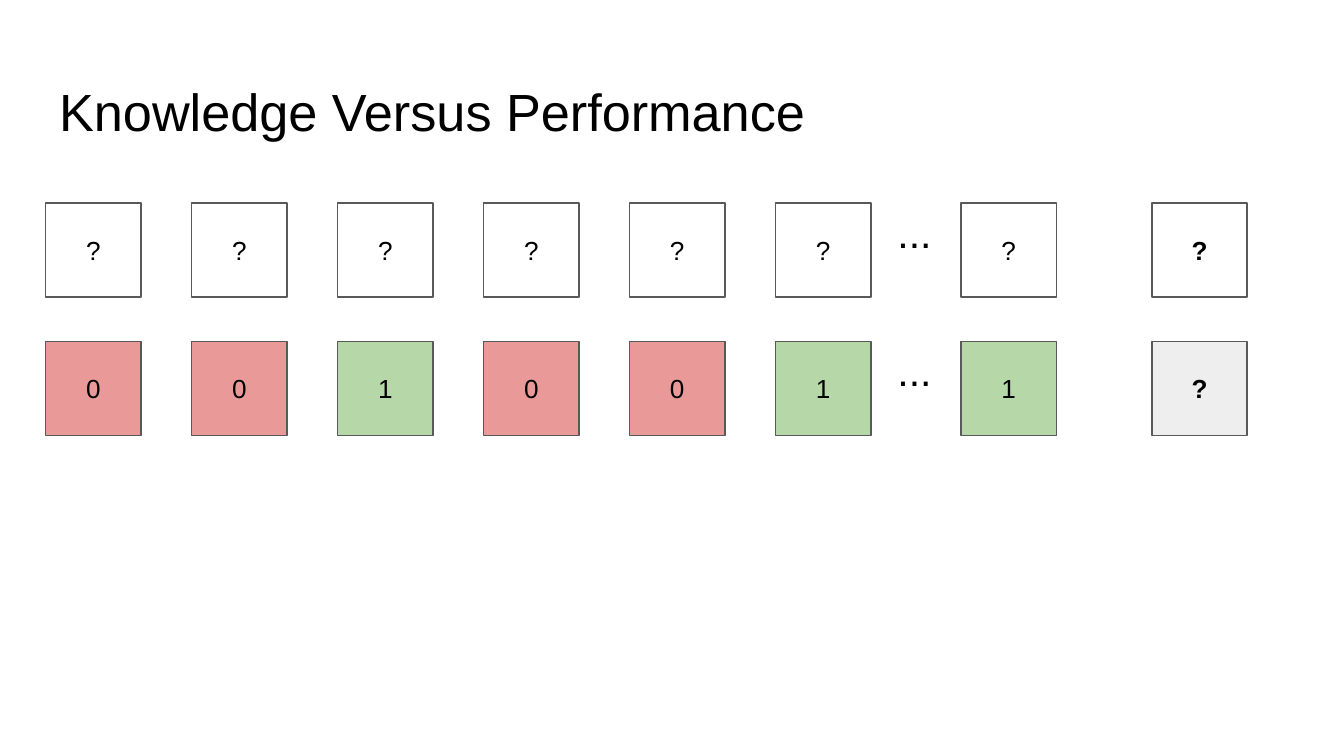
from dataclasses import dataclass

from pptx import Presentation
from pptx.dml.color import RGBColor as Rgb
from pptx.enum.shapes import MSO_SHAPE as Shape
from pptx.enum.text import MSO_ANCHOR as Anchor, PP_ALIGN as Align
from pptx.util import Inches, Pt


@dataclass(frozen=True)
class Theme:
    font: str = "Arial"
    ink: str = "000000"
    outline: str = "595959"
    blank: str = "FFFFFF"
    wrong: str = "EA9999"
    right: str = "B6D7A8"
    unknown: str = "EEEEEE"
    title_size: int = 28
    cell_size: int = 14
    dots_size: int = 22


THEME = Theme()
WIDTH = 10
HEIGHT = WIDTH * 9 / 16
MARGIN = 0.34
PITCH = (5.77 - MARGIN) / 5
CELL_WIDTH, CELL_HEIGHT = 0.71, 0.7
COLUMNS = [MARGIN + PITCH * index for index in range(6)] + [7.15, 8.57]
DOTS_LEFT, DOTS_WIDTH, DOTS_HEIGHT, DOTS_RISE = 6.24, 1.13, 0.49, 0.07
KNOWLEDGE_TOP, PERFORMANCE_TOP = 1.51, 2.54


def write(shape, text, size, align, anchor, bold=False):
    frame = shape.text_frame
    frame.word_wrap = True
    frame.vertical_anchor = anchor
    frame.margin_left = frame.margin_right = Inches(0.1)
    frame.margin_top = frame.margin_bottom = Inches(0.1)
    para = frame.paragraphs[0]
    para.text = text
    para.alignment = align
    para.font.name = THEME.font
    para.font.size = Pt(size)
    para.font.bold = bold
    para.font.color.rgb = Rgb.from_string(THEME.ink)


def add_title(page, text):
    title = page.shapes.title
    title.left, title.top = Inches(MARGIN), Inches(0.49)
    title.width, title.height = Inches(WIDTH - 2 * MARGIN), Inches(0.63)
    write(title, text, THEME.title_size, Align.LEFT, Anchor.TOP)


def add_cell(page, left, top, text, fill, bold):
    box = page.shapes.add_shape(
        Shape.RECTANGLE, Inches(left), Inches(top), Inches(CELL_WIDTH), Inches(CELL_HEIGHT)
    )
    box.shadow.inherit = False
    box.fill.solid()
    box.fill.fore_color.rgb = Rgb.from_string(fill)
    box.line.color.rgb = Rgb.from_string(THEME.outline)
    box.line.width = Pt(0.75)
    write(box, text, THEME.cell_size, Align.CENTER, Anchor.MIDDLE, bold)


def add_dots(page, top):
    box = page.shapes.add_textbox(
        Inches(DOTS_LEFT), Inches(top - DOTS_RISE), Inches(DOTS_WIDTH), Inches(DOTS_HEIGHT)
    )
    write(box, "...", THEME.dots_size, Align.CENTER, Anchor.TOP)


def add_sequence(page, top, values, fills):
    for left, value, fill in zip(COLUMNS, values, fills):
        add_cell(page, left, top, value, fill, bold=left == COLUMNS[-1])
    add_dots(page, top)


def main():
    deck = Presentation()
    deck.slide_width, deck.slide_height = Inches(WIDTH), Inches(HEIGHT)
    page = deck.slides.add_slide(deck.slide_layouts[5])
    add_title(page, "Knowledge Versus Performance")

    answers = "0010011?"
    answer_fills = {"0": THEME.wrong, "1": THEME.right, "?": THEME.unknown}
    add_sequence(page, PERFORMANCE_TOP, answers, [answer_fills[answer] for answer in answers])
    add_sequence(page, KNOWLEDGE_TOP, "?" * len(COLUMNS), [THEME.blank] * len(COLUMNS))
    deck.save("out.pptx")


if __name__ == "__main__":
    main()
